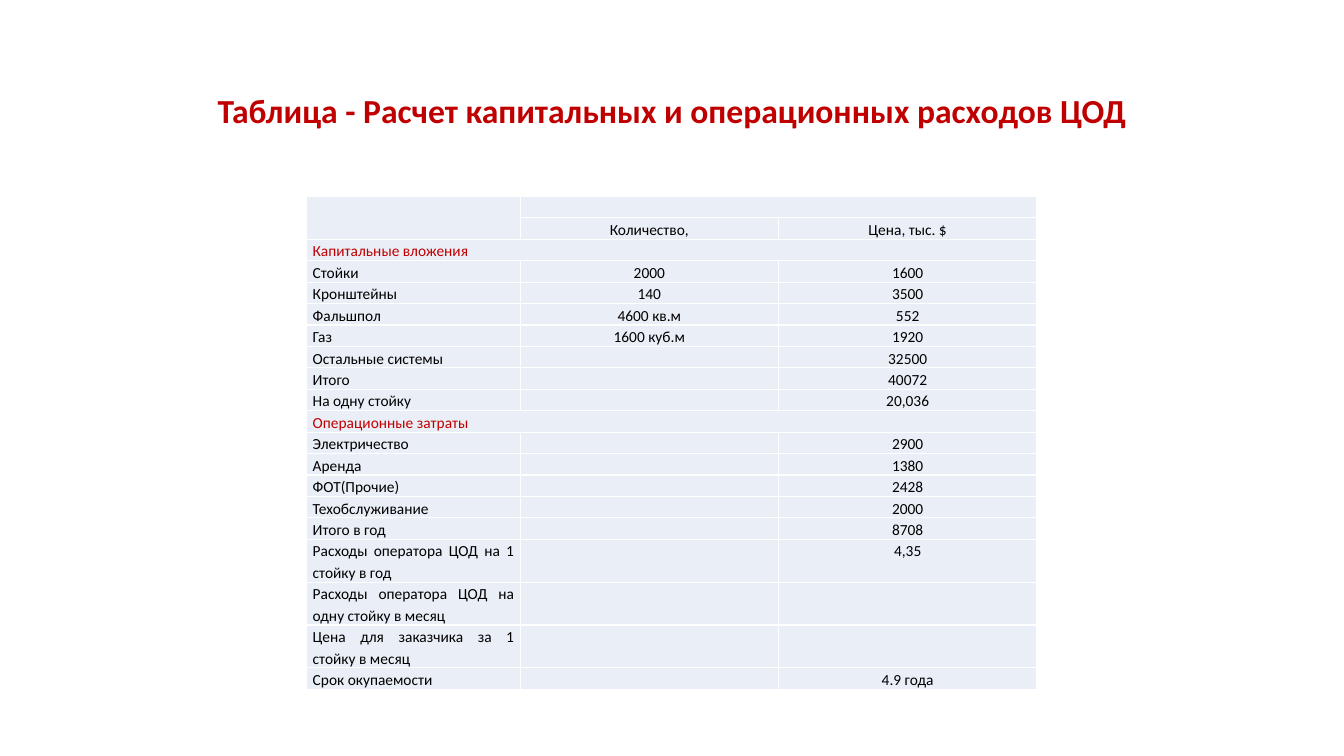
from dataclasses import dataclass

from lxml import etree
from pptx import Presentation
from pptx import util as u
from pptx.dml.color import RGBColor
from pptx.enum import text
from pptx.oxml import ns

RED = RGBColor(0xC0, 0x00, 0x00)
BLACK = RGBColor(0x00, 0x00, 0x00)
WHITE = RGBColor(0xFF, 0xFF, 0xFF)
PALE_BLUE = RGBColor(0xEA, 0xEF, 0xF7)
FONT = "Calibri"
ROW_HEIGHT = 0.54
COLUMN_WIDTHS = (5.38, 6.51, 6.51)


@dataclass
class Row:
    label: str = ""
    quantity: str = ""
    price: str = ""
    lines: int = 1
    section: bool = False


ROWS = [
    Row(),
    Row("", "Количество,", "Цена, тыс. $"),
    Row("Капитальные вложения", section=True),
    Row("Стойки", "2000", "1600"),
    Row("Кронштейны", "140", "3500"),
    Row("Фальшпол", "4600 кв.м", "552"),
    Row("Газ", "1600 куб.м", "1920"),
    Row("Остальные системы", "", "32500"),
    Row("Итого", "", "40072"),
    Row("На одну стойку", "", "20,036"),
    Row("Операционные затраты", section=True),
    Row("Электричество", "", "2900"),
    Row("Аренда", "", "1380"),
    Row("ФОТ(Прочие)", "", "2428"),
    Row("Техобслуживание", "", "2000"),
    Row("Итого в год", "", "8708"),
    Row("Расходы оператора ЦОД на 1 стойку в год", "", "4,35", lines=2),
    Row("Расходы оператора ЦОД на одну стойку в месяц", lines=2),
    Row("Цена для заказчика за 1 стойку в месяц", lines=2),
    Row("Срок окупаемости", "", "4.9 года"),
]


def style_paragraph(p, size: float, color: RGBColor, align, spacing: float, bold: bool = False) -> None:
    p.alignment = align
    p.line_spacing = spacing
    p.font.name = FONT
    p.font.size = u.Pt(size)
    p.font.bold = bold
    p.font.color.rgb = color


def add_borders(cell) -> None:
    tc_pr = cell._tc.get_or_add_tcPr()
    for side in ("lnL", "lnR", "lnT", "lnB"):
        line = etree.SubElement(tc_pr, ns.qn(f"a:{side}"), w=str(u.Pt(1)))
        fill = etree.SubElement(line, ns.qn("a:solidFill"))
        etree.SubElement(fill, ns.qn("a:srgbClr"), val=str(WHITE))


def fill_cell(cell, value: str, color: RGBColor, align) -> None:
    add_borders(cell)
    cell.fill.solid()
    cell.fill.fore_color.rgb = PALE_BLUE
    cell.margin_left = cell.margin_right = u.Cm(0.15)
    cell.margin_top = cell.margin_bottom = 0
    p = cell.text_frame.paragraphs[0]
    if value:
        p.add_run().text = value
    else:
        etree.SubElement(p._p, ns.qn("a:endParaRPr"), sz="1100")
    style_paragraph(p, 11, color, align, 1.15)


def add_title(s) -> None:
    sp = s.shapes.add_textbox(u.Cm(2.33), u.Cm(1.01), u.Cm(29.21), u.Cm(3.68))
    tf = sp.text_frame
    tf.word_wrap = True
    tf.vertical_anchor = text.MSO_ANCHOR.MIDDLE
    p = tf.paragraphs[0]
    p.add_run().text = "Таблица - Расчет капитальных и операционных расходов ЦОД"
    style_paragraph(p, 24, RED, text.PP_ALIGN.CENTER, 0.9, bold=True)


def add_cost_table(s) -> None:
    height = ROW_HEIGHT * sum(row.lines for row in ROWS)
    frame = s.shapes.add_table(len(ROWS), len(COLUMN_WIDTHS), u.Cm(7.73), u.Cm(4.95),
                               u.Cm(sum(COLUMN_WIDTHS)), u.Cm(height))
    table = frame.table
    table.first_row = table.horz_banding = False
    for column, width in zip(table.columns, COLUMN_WIDTHS):
        column.width = u.Cm(width)
    for i, row in enumerate(ROWS):
        table.rows[i].height = u.Cm(ROW_HEIGHT * row.lines)
        label_align = text.PP_ALIGN.LEFT if row.section else text.PP_ALIGN.JUSTIFY
        fill_cell(table.cell(i, 0), row.label, RED if row.section else BLACK, label_align)
        for j, value in enumerate((row.quantity, row.price), start=1):
            fill_cell(table.cell(i, j), value, BLACK, text.PP_ALIGN.CENTER)
        if row.section:
            table.cell(i, 0).merge(table.cell(i, 2))
    table.cell(0, 0).merge(table.cell(1, 0))
    table.cell(0, 1).merge(table.cell(0, 2))


def main() -> None:
    prs = Presentation()
    prs.slide_width, prs.slide_height = u.Cm(33.87), u.Cm(19.05)
    s = prs.slides.add_slide(prs.slide_layouts[6])
    add_title(s)
    add_cost_table(s)
    prs.save("out.pptx")


if __name__ == "__main__":
    main()
